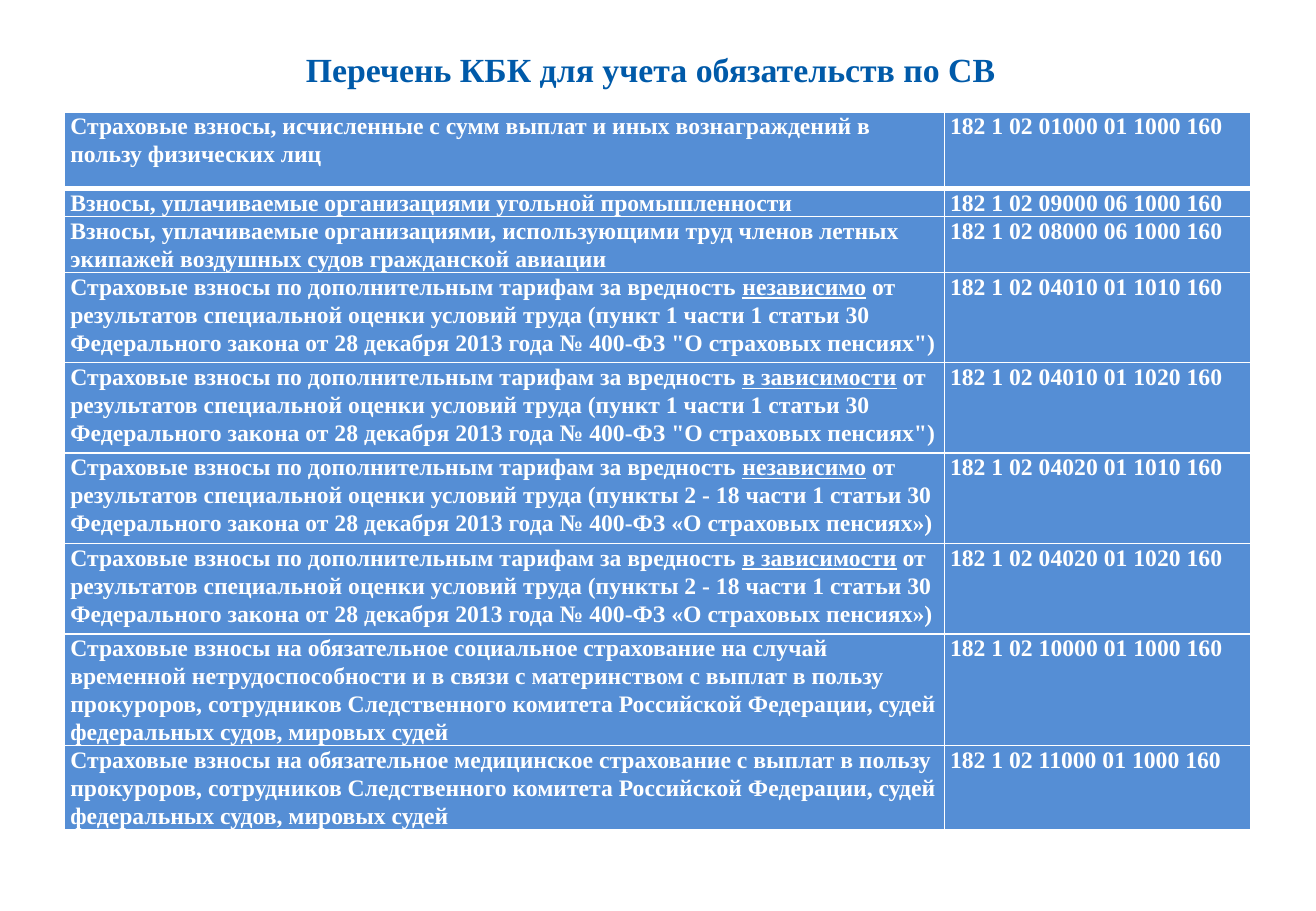
from lxml import etree
from pptx import Presentation
from pptx.dml.color import RGBColor
from pptx.enum.text import MSO_ANCHOR, PP_ALIGN
from pptx.oxml.ns import qn
from pptx.util import Cm, Pt

MIDDLE = MSO_ANCHOR.MIDDLE
CENTER = PP_ALIGN.CENTER
COLORS = {"title": "005AA9", "cell": "558ED5", "white": "FFFFFF"}
FONT = "Times New Roman"
TITLE_FONT = {"name": FONT, "size": Pt(20), "bold": True, "underline": False}
CELL_FONT = {"name": FONT, "size": Pt(14), "bold": True}
TITLE_FRAME = {"word_wrap": True, "vertical_anchor": MIDDLE}
CELL_MARGINS = {"margin_left": Cm(0.12), "margin_right": Cm(0.12),
                "margin_top": 0, "margin_bottom": 0}

RATE = "Страховые взносы по дополнительным тарифам за вредность "
RESULT = " от результатов специальной оценки условий труда ({} части 1 статьи 30 Федерального закона от 28 декабря 2013 года № 400-ФЗ {})"
FIRST = RESULT.format("пункт 1", '"О страховых пенсиях"')
OTHER = RESULT.format("пункты 2 - 18", "«О страховых пенсиях»")
JUDGES = " с выплат в пользу прокуроров, сотрудников Следственного комитета Российской Федерации, судей федеральных судов, мировых судей"
ROWS = [
    (1.6, ["Страховые взносы, исчисленные с сумм выплат и иных вознаграждений в пользу физических лиц"], "01000 01 1000"),
    (0.58, ["Взносы, уплачиваемые организациями угольной промышленности"], "09000 06 1000"),
    (1.17, ["Взносы, уплачиваемые организациями, использующими труд членов летных экипажей воздушных судов гражданской авиации"], "08000 06 1000"),
    (1.89, [RATE, "независимо", FIRST], "04010 01 1010"),
    (1.89, [RATE, "в зависимости", FIRST], "04010 01 1020"),
    (1.89, [RATE, "независимо", OTHER], "04020 01 1010"),
    (1.89, [RATE, "в зависимости", OTHER], "04020 01 1020"),
    (2.34, ["Страховые взносы на обязательное социальное страхование на случай временной нетрудоспособности и в связи с материнством" + JUDGES], "10000 01 1000"),
    (1.75, ["Страховые взносы на обязательное медицинское страхование" + JUDGES], "11000 01 1000"),
]


def apply(obj, values):
    for name, value in values.items():
        setattr(obj, name, value)


def rgb(name):
    return RGBColor.from_string(COLORS[name])


def add_border(cell, side, width):
    ln = etree.SubElement(cell._tc.get_or_add_tcPr(), qn(f"a:ln{side}"), w=str(Pt(width)))
    fill = etree.SubElement(ln, qn("a:solidFill"))
    etree.SubElement(fill, qn("a:srgbClr"), val=COLORS["white"])


def fill_cell(cell, parts, row):
    apply(cell, CELL_MARGINS)
    p = cell.text_frame.paragraphs[0]
    p.line_spacing = 1.07
    for i, text in enumerate(parts):
        r = p.add_run()
        r.text = text
        apply(r.font, CELL_FONT)
        r.font.underline = i == 1
        r.font.color.rgb = rgb("white")
    widths = {"L": 1, "R": 1, "T": 3 if row == 1 else 1, "B": 3 if row == 0 else 1}
    for side, width in widths.items():
        add_border(cell, side, width)
    cell.fill.solid()
    cell.fill.fore_color.rgb = rgb("cell")


def add_title(slide, left, top, width, height):
    sp = slide.shapes.title
    apply(sp, {"left": left, "top": top, "width": width, "height": height})
    tf = sp.text_frame
    apply(tf, TITLE_FRAME)
    p = tf.paragraphs[0]
    p.alignment = CENTER
    r = p.add_run()
    r.text = "Перечень КБК для учета обязательств по СВ"
    apply(r.font, TITLE_FONT)
    r.font.color.rgb = rgb("title")


def add_codes(slide, left, top, width, height):
    table = slide.shapes.add_table(len(ROWS), 2, left, top, width, height).table
    table.columns[1].width = Cm(6.4)
    table.columns[0].width = width - Cm(6.4)
    for i, (row_height, parts, code) in enumerate(ROWS):
        table.rows[i].height = Cm(row_height)
        fill_cell(table.cell(i, 0), parts, i)
        fill_cell(table.cell(i, 1), [f"182 1 02 {code} 160"], i)


def main():
    prs = Presentation()
    prs.slide_width, prs.slide_height = Cm(27.51), Cm(19.05)
    slide = prs.slides.add_slide(prs.slide_layouts[5])
    add_title(slide, Cm(2.57), Cm(0.74), Cm(22.07), Cm(1.4))
    add_codes(slide, Cm(1.35), Cm(2.34), Cm(24.79), Cm(sum(row[0] for row in ROWS)))
    prs.save("out.pptx")


if __name__ == "__main__":
    main()
